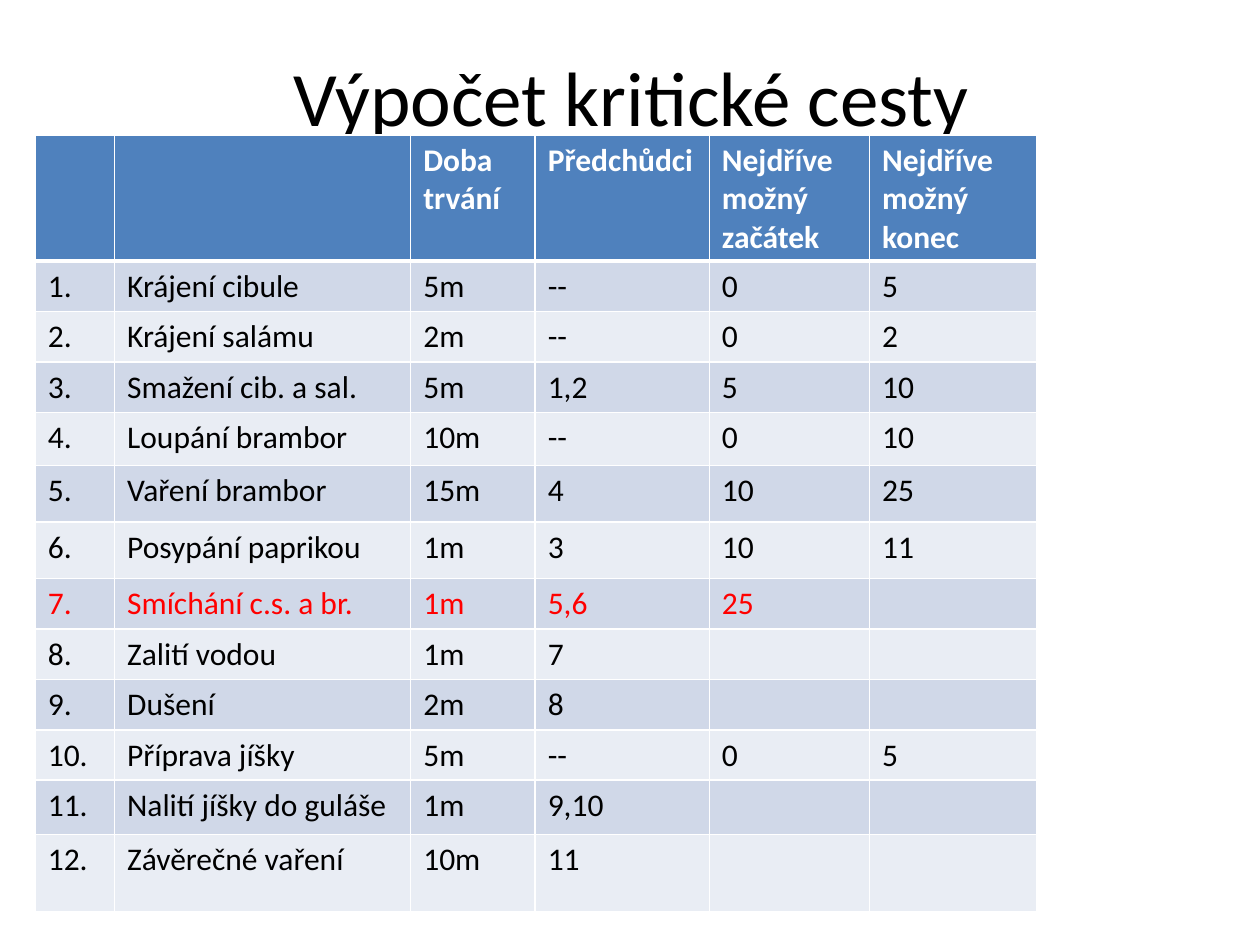
from dataclasses import dataclass

from lxml.etree import SubElement
from pptx import Presentation
from pptx.dml.color import RGBColor
from pptx.enum.text import MSO_ANCHOR, PP_ALIGN
from pptx.oxml.ns import qn
from pptx.util import Cm, Pt


@dataclass(frozen=True)
class Theme:
    font: str = "Calibri"
    title_size: int = 44
    cell_size: int = 18
    text: str = "000000"
    light: str = "FFFFFF"
    header: str = "4F81BD"
    bands: tuple = ("D0D8E8", "E9EDF4")
    highlight: str = "FF0000"
    thin: int = 1
    thick: int = 3


THEME = Theme()

TITLE = "Výpočet kritické cesty"
HEADER = ("", "", "Doba trvání", "Předchůdci",
          "Nejdříve možný začátek", "Nejdříve možný konec")
# Task, duration, predecessors, earliest start, earliest end
TASKS = [
    ("Krájení cibule", "5m", "--", "0", "5"),
    ("Krájení salámu", "2m", "--", "0", "2"),
    ("Smažení cib. a sal.", "5m", "1,2", "5", "10"),
    ("Loupání brambor", "10m", "--", "0", "10"),
    ("Vaření brambor", "15m", "4", "10", "25"),
    ("Posypání paprikou", "1m", "3", "10", "11"),
    ("Smíchání c.s. a br.", "1m", "5,6", "25", ""),
    ("Zalití vodou", "1m", "7", "", ""),
    ("Dušení", "2m", "8", "", ""),
    ("Příprava jíšky", "5m", "--", "0", "5"),
    ("Nalití jíšky do guláše", "1m", "9,10", "", ""),
    ("Závěrečné vaření", "10m", "11", "", ""),
]
CURRENT_TASK = 7
COL_WIDTHS = (1.6, 5.97, 2.51, 3.51, 3.23, 3.38)
ROW_HEIGHT = 0.97
SPECIAL_HEIGHTS = {0: 1.7, 4: 1.07, 5: 1.14, 6: 1.14, 11: 1.09, 12: 1.57}


def add_run(p, text, size, color, bold=False):
    r = p.add_run()
    r.text = text
    values = {"name": THEME.font, "size": Pt(size), "bold": bold}
    for name, value in values.items():
        setattr(r.font, name, value)
    r.font.color.rgb = RGBColor.from_string(color)


def add_title(s):
    tf = s.shapes.add_textbox(Cm(1.3), Cm(0.33), Cm(22.86), Cm(3.18)).text_frame
    values = {"word_wrap": True, "vertical_anchor": MSO_ANCHOR.MIDDLE}
    for name, value in values.items():
        setattr(tf, name, value)
    p = tf.paragraphs[0]
    p.alignment = PP_ALIGN.CENTER
    add_run(p, TITLE, THEME.title_size, THEME.text)


def set_borders(cell, widths):
    tc_pr = cell._tc.get_or_add_tcPr()
    for side, width in widths.items():
        ln = SubElement(tc_pr, qn(f"a:ln{side}"), w=str(Pt(width)))
        fill = SubElement(ln, qn("a:solidFill"))
        SubElement(fill, qn("a:srgbClr"), val=THEME.light)


def fill_cell(cell, text, fill, color, bold, borders):
    set_borders(cell, borders)
    cell.fill.solid()
    cell.fill.fore_color.rgb = RGBColor.from_string(fill)
    if text:
        add_run(cell.text_frame.paragraphs[0], text, THEME.cell_size, color, bold)


def row_format(i):
    borders = dict.fromkeys("LRTB", THEME.thin)
    if i == 0:
        return {"fill": THEME.header, "color": THEME.light, "bold": True,
                "borders": {**borders, "B": THEME.thick}}
    if i == 1:
        borders["T"] = THEME.thick
    color = THEME.highlight if i == CURRENT_TASK else THEME.text
    return {"fill": THEME.bands[(i - 1) % 2], "color": color,
            "bold": False, "borders": borders}


def add_task_table(s):
    rows = [HEADER] + [(f"{n}.", *task) for n, task in enumerate(TASKS, 1)]
    heights = [SPECIAL_HEIGHTS.get(i, ROW_HEIGHT) for i in range(len(rows))]
    table = s.shapes.add_table(len(rows), len(HEADER), Cm(0.71), Cm(2.72),
                               Cm(sum(COL_WIDTHS)), Cm(sum(heights))).table
    for col, width in zip(table.columns, COL_WIDTHS):
        col.width = Cm(width)
    for i, (row, height, texts) in enumerate(zip(table.rows, heights, rows)):
        row.height = Cm(height)
        for cell, text in zip(row.cells, texts):
            fill_cell(cell, text, **row_format(i))


def main():
    prs = Presentation()
    prs.slide_width, prs.slide_height = Cm(25.4), Cm(19.05)
    s = prs.slides.add_slide(prs.slide_layouts[6])

    # The table lies over the lower part of the title
    add_title(s)
    add_task_table(s)
    prs.save("out.pptx")


if __name__ == "__main__":
    main()
